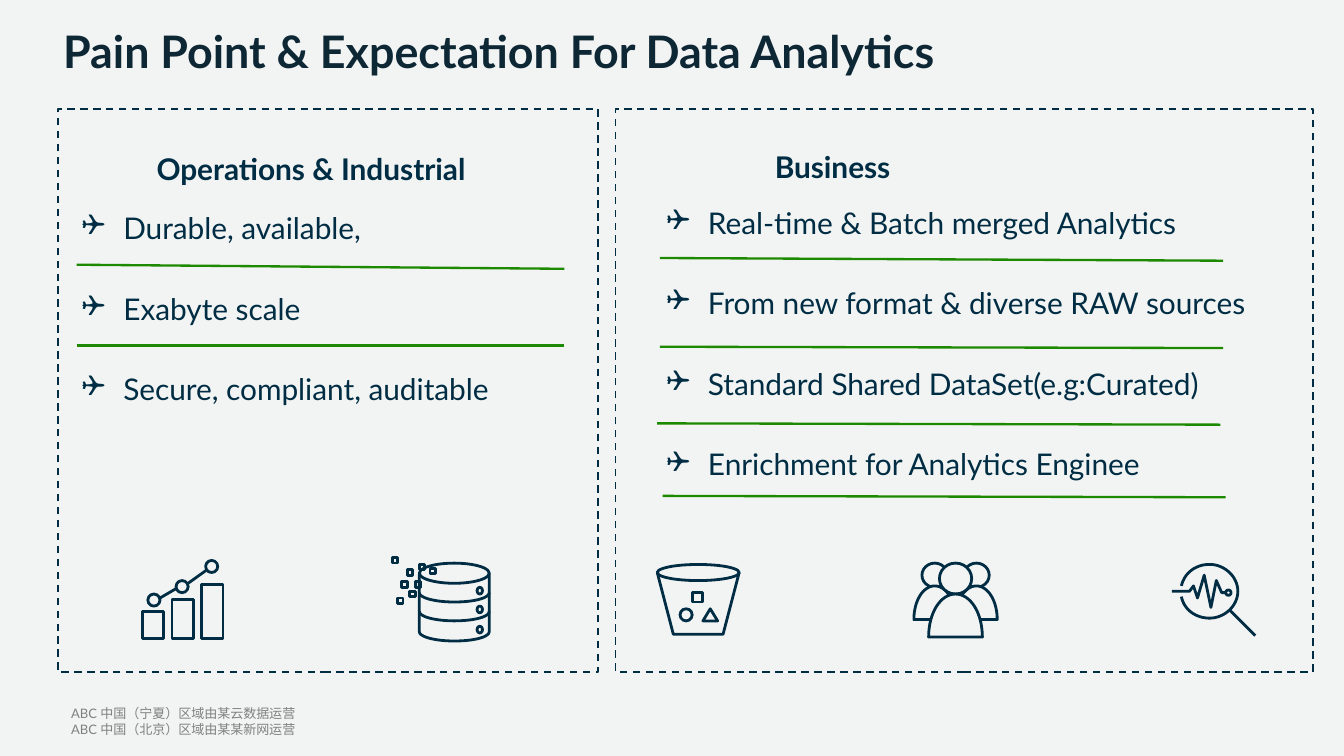
from dataclasses import dataclass

from pptx import Presentation
from pptx import util as u
from pptx.dml.color import RGBColor
from pptx.enum import dml, shapes, text
from pptx.oxml.xmlchemy import OxmlElement

Kind = shapes.MSO_SHAPE
Align = text.PP_ALIGN
Point = tuple[float, float]


@dataclass(frozen=True)
class Theme:
    font: str = "Lato"
    bullet_font: str = "Wingdings"
    back: str = "F2F4F4"
    title: str = "0E2735"
    ink: str = "002D43"
    rule: str = "1D8900"
    muted: str = "808080"
    white: str = "FFFFFF"
    title_size: float = 24
    body_size: float = 16
    footer_size: float = 7
    icon_line: float = 1.5
    rule_line: float = 1.25
    panel_line: float = 1


@dataclass(frozen=True)
class Box:
    left: float
    top: float
    width: float
    height: float

    def lengths(self) -> list[u.Length]:
        return [u.Inches(n) for n in (self.left, self.top, self.width, self.height)]


@dataclass(frozen=True)
class Panel:
    frame: Box
    heading: str
    heading_box: Box
    items: tuple[str, ...]
    items_box: Box
    rules: tuple[tuple[Point, Point], ...]


THEME = Theme()
MARGINS = ("margin_left", "margin_top", "margin_right", "margin_bottom")

PANELS = (
    Panel(Box(0.43, 0.81, 4.02, 4.19),
          "Operations & Industrial", Box(0.99, 1.07, 2.65, 0.42),
          ("Durable, available,", "Exabyte scale", "Secure, compliant, auditable"),
          Box(0.51, 1.51, 5.5, 1.58),
          (((0.57, 1.97), (4.2, 2)), ((0.57, 2.57), (4.2, 2.57)))),
    Panel(Box(4.58, 0.81, 5.19, 4.19),
          "Business", Box(4.87, 1.06, 2.65, 0.42),
          ("Real-time & Batch merged Analytics", "From new format & diverse RAW sources",
           "Standard Shared DataSet(e.g:Curated)", "Enrichment for Analytics Enginee"),
          Box(4.86, 1.47, 5, 2.19),
          (((4.91, 1.92), (9.1, 1.94)), ((4.91, 2.58), (9.1, 2.59)),
           ((4.89, 3.15), (9.08, 3.16)), ((4.93, 3.69), (9.12, 3.7)))),
)


def rgb(value: str) -> RGBColor:
    return RGBColor.from_string(value)


def apply(target, values: dict) -> None:
    for name, value in values.items():
        setattr(target, name, value)


def style_line(line, color: str, width: float) -> None:
    line.color.rgb = rgb(color)
    line.width = u.Pt(width)


def style_shape(shape, fill: str | None, width: float = THEME.icon_line) -> None:
    shape.shadow.inherit = False
    if fill:
        shape.fill.solid()
        shape.fill.fore_color.rgb = rgb(fill)
    else:
        shape.fill.background()
    style_line(shape.line, THEME.ink, width)


def add_preset(slide, kind, box: Box, fill: str | None = None) -> None:
    style_shape(slide.shapes.add_shape(kind, *box.lengths()), fill)


def add_line(slide, start: Point, end: Point, color: str, width: float) -> None:
    line = slide.shapes.add_connector(
        shapes.MSO_CONNECTOR.STRAIGHT, *(u.Inches(n) for n in start + end))
    style_line(line.line, color, width)
    line._element.spPr.append(OxmlElement("a:effectLst"))


def add_outline(slide, steps: list[tuple], closed: bool = False, fill: str | None = None) -> None:
    """Draw points (x, y) and cubic curves (two handles and an end point, as six numbers)."""
    points = [steps[0]]
    for step in steps[1:]:
        if len(step) == 2:
            points.append(step)
            continue
        knots = [points[-1], step[:2], step[2:4], step[4:]]
        for t in (n / 16 for n in range(1, 17)):
            weights = ((1 - t) ** 3, 3 * t * (1 - t) ** 2, 3 * t * t * (1 - t), t ** 3)
            points.append(tuple(sum(w * k[axis] for w, k in zip(weights, knots))
                                for axis in (0, 1)))
    lengths = [(u.Inches(x), u.Inches(y)) for x, y in points]
    builder = slide.shapes.build_freeform(*lengths[0])
    builder.add_line_segments(lengths[1:], close=closed)
    style_shape(builder.convert_to_shape(), fill)


def add_bullet(para, bullet: str) -> None:
    props = para._p.get_or_add_pPr()
    for name, inches in {"marL": 0.31, "indent": -0.31}.items():
        props.set(name, str(u.Inches(inches)))
    for tag, name, value in (("a:buFont", "typeface", THEME.bullet_font),
                             ("a:buChar", "char", bullet)):
        mark = OxmlElement(tag)
        mark.set(name, value)
        props.append(mark)


def write(frame, lines: tuple[str, ...], color: str, size: float, bold: bool = False,
          bullet: str = "", gap: float = 0, align=Align.LEFT) -> None:
    for index, line in enumerate(lines):
        para = frame.add_paragraph() if index else frame.paragraphs[0]
        if bullet:
            add_bullet(para, bullet)
        para.alignment = align
        if index and gap:
            para.space_before = u.Pt(gap)
        span = para.add_run()
        span.text = line
        apply(span.font, {"name": THEME.font, "size": u.Pt(size), "bold": bold})
        span.font.color.rgb = rgb(color)


def add_text(slide, box: Box, lines: tuple[str, ...], color: str, size: float,
             wrap: bool = True, margin: float | None = None, **options) -> None:
    frame = slide.shapes.add_textbox(*box.lengths()).text_frame
    frame.word_wrap = wrap
    if margin is not None:
        apply(frame, dict.fromkeys(MARGINS, u.Inches(margin)))
    write(frame, lines, color, size, **options)


def add_title(slide, title: str) -> None:
    holder = slide.shapes.title
    apply(holder, dict(zip(("left", "top", "width", "height"),
                           Box(0.37, 0.13, 8.97, 0.6).lengths())))
    apply(holder.text_frame, {"vertical_anchor": text.MSO_ANCHOR.TOP, "word_wrap": True,
                              "auto_size": text.MSO_AUTO_SIZE.NONE})
    write(holder.text_frame, (title,), THEME.title, THEME.title_size, bold=True)


def add_panel(slide, panel: Panel) -> None:
    add_text(slide, panel.items_box, panel.items, THEME.ink, THEME.body_size,
             bullet="❑", gap=24)
    for start, end in panel.rules:
        add_line(slide, start, end, THEME.rule, THEME.rule_line)
    add_text(slide, panel.heading_box, (panel.heading,), THEME.ink, THEME.body_size,
             wrap=False, bold=True, align=Align.CENTER)
    frame = slide.shapes.add_shape(Kind.RECTANGLE, *panel.frame.lengths())
    style_shape(frame, None, THEME.panel_line)
    frame.line.dash_style = dml.MSO_LINE.DASH


def add_growth_icon(slide) -> None:
    for left, top in ((1.06, 4.55), (1.28, 4.46), (1.5, 4.35)):
        add_preset(slide, Kind.RECTANGLE, Box(left, top, 0.16, 4.75 - top))
    for left, top in ((1.1, 4.42), (1.31, 4.32), (1.53, 4.17)):
        add_preset(slide, Kind.OVAL, Box(left, top, 0.09, 0.09))
    for start, end in (((1.54, 4.24), (1.4, 4.34)), ((1.31, 4.38), (1.19, 4.45))):
        add_line(slide, start, end, THEME.ink, THEME.icon_line)


def add_database_icon(slide) -> None:
    left, middle, right = 3.12, 3.38, 3.64
    add_preset(slide, Kind.OVAL, Box(left, 4.19, 0.52, 0.15))

    def rim(y: float) -> list[tuple]:
        return [(left, y), (left, y + 0.04, 3.24, y + 0.07, middle, y + 0.07),
                (3.53, y + 0.07, right, y + 0.04, right, y)]

    for y in (4.41, 4.55):
        add_outline(slide, rim(y))
    add_outline(slide, [(left, 4.27), *rim(4.7), (right, 4.27)])
    for top in (4.37, 4.51, 4.66):
        add_preset(slide, Kind.OVAL, Box(3.55, top, 0.04, 0.05))
    for x, y in ((3.03, 4.24), (3.2, 4.23), (2.99, 4.33), (3.09, 4.33),
                 (2.96, 4.45), (3.05, 4.4), (3.12, 4.2), (2.92, 4.15)):
        add_preset(slide, Kind.RECTANGLE, Box(x, y, 0.04, 0.04))


def add_bucket_icon(slide) -> None:
    add_outline(slide, [(4.89, 4.26), (5.01, 4.72), (5.38, 4.72), (5.5, 4.26)])
    for kind, box in ((Kind.OVAL, Box(4.89, 4.2, 0.61, 0.12)),
                      (Kind.RECTANGLE, Box(5.15, 4.41, 0.08, 0.07)),
                      (Kind.OVAL, Box(5.06, 4.53, 0.09, 0.09)),
                      (Kind.ISOSCELES_TRIANGLE, Box(5.23, 4.53, 0.11, 0.09))):
        add_preset(slide, kind, box)


def add_people_icon(slide) -> None:
    for head, body in ((Box(6.86, 4.19, 0.19, 0.18), Box(6.8, 4.36, 0.31, 0.25)),
                       (Box(7.17, 4.19, 0.19, 0.18), Box(7.11, 4.36, 0.31, 0.25)),
                       (Box(6.99, 4.19, 0.24, 0.23), Box(6.91, 4.42, 0.4, 0.32))):
        add_preset(slide, Kind.OVAL, head, THEME.back)
        left, right = body.left, body.left + body.width
        middle, bottom = body.left + body.width / 2, body.top + body.height
        shoulder, bend = body.top + body.height * 0.44, body.width * 0.22
        add_outline(slide, [(left, bottom),
                            (left, shoulder, left + bend, body.top, middle, body.top),
                            (right - bend, body.top, right, shoulder, right, bottom)],
                    closed=True, fill=THEME.back)


def add_search_icon(slide) -> None:
    add_outline(slide, [(8.72, 4.4), (8.85, 4.4), (8.88, 4.36), (8.91, 4.45), (8.96, 4.28),
                        (9.01, 4.52), (9.05, 4.32), (9.09, 4.41), (9.14, 4.41)])
    add_preset(slide, Kind.OVAL, Box(9.12, 4.39, 0.04, 0.04), THEME.white)
    add_outline(slide, [(8.79, 4.44), (8.81, 4.54, 8.9, 4.6, 9, 4.6),
                        (9.11, 4.6, 9.21, 4.51, 9.21, 4.4), (9.21, 4.29, 9.11, 4.2, 9, 4.2),
                        (8.89, 4.2, 8.81, 4.27, 8.79, 4.36)])
    add_line(slide, (9.15, 4.54), (9.34, 4.73), THEME.ink, THEME.icon_line)


def main() -> None:
    deck = Presentation()
    width = u.Inches(10)
    apply(deck, {"slide_width": width, "slide_height": width * 9 // 16})
    page = deck.slides.add_slide(deck.slide_layouts[5])
    page.background.fill.solid()
    page.background.fill.fore_color.rgb = rgb(THEME.back)
    add_text(page, Box(0.53, 5.25, 4.86, 0.24),
             ("ABC 中国（宁夏）区域由某云数据运营", "ABC 中国（北京）区域由某某新网运营"),
             THEME.muted, THEME.footer_size, margin=0)
    add_title(page, "Pain Point & Expectation For Data Analytics")
    for add_icon in (add_growth_icon, add_database_icon, add_bucket_icon,
                     add_people_icon, add_search_icon):
        add_icon(page)
    for panel in PANELS:
        add_panel(page, panel)
    deck.save("out.pptx")


if __name__ == "__main__":
    main()
